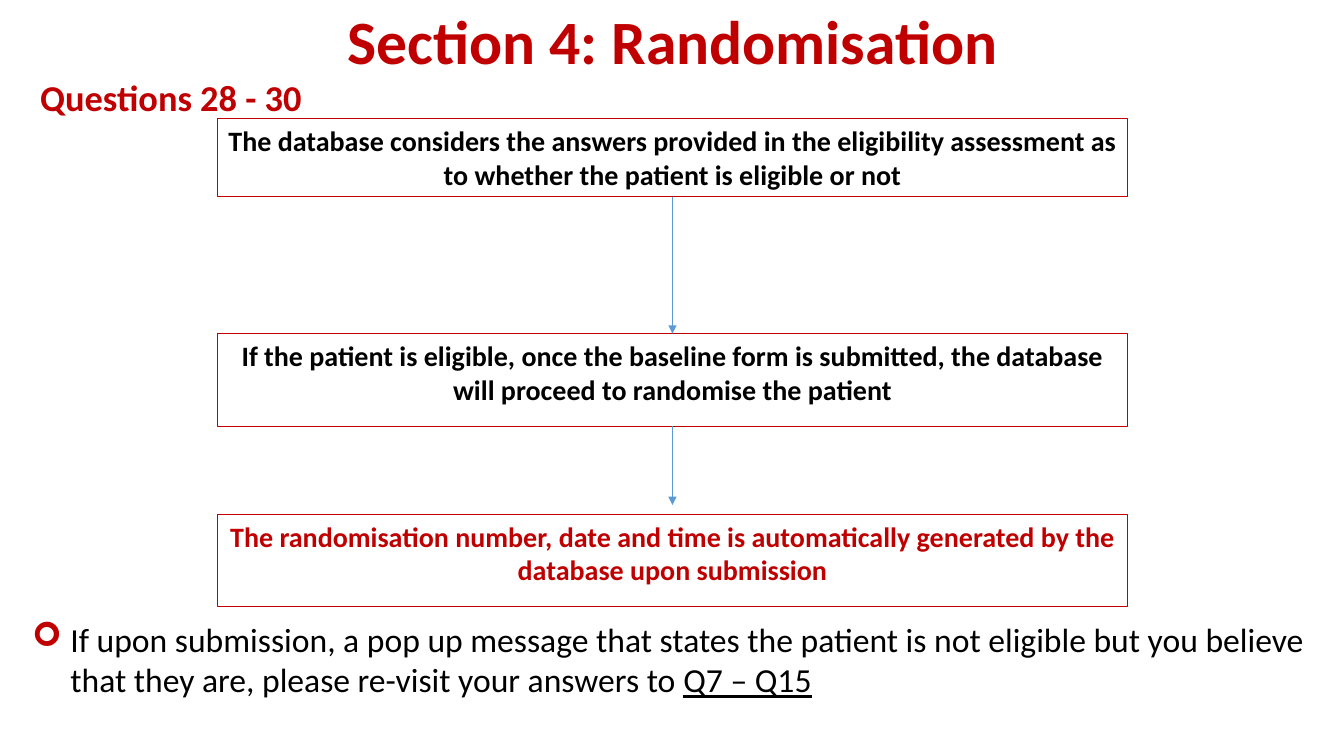
from dataclasses import dataclass

from lxml import etree
from pptx import Presentation
from pptx.dml.color import RGBColor
from pptx.enum.shapes import MSO_CONNECTOR, MSO_SHAPE
from pptx.enum.text import MSO_ANCHOR, PP_ALIGN
from pptx.oxml.ns import qn
from pptx.shapes.autoshape import Shape
from pptx.shapes.connector import Connector
from pptx.slide import Slide
from pptx.text.text import _Paragraph
from pptx.util import Emu, Inches, Pt

CENTER, LEFT = PP_ALIGN.CENTER, PP_ALIGN.LEFT
TOP = MSO_ANCHOR.TOP
RECTANGLE = MSO_SHAPE.RECTANGLE
STRAIGHT = MSO_CONNECTOR.STRAIGHT
TOP_SIDE, BOTTOM_SIDE = 0, 2

CELL = Inches(0.1)  # the slide is a grid of 133.3 columns by 75 rows
COLUMNS, ROWS = 133.3, 75
STEP_LEFT, STEP_WIDTH = 21.6, 90.2
RED, BLACK, BLUE = "C00000", "000000", "5B9BD5"
FONT = "Calibri"


@dataclass(frozen=True)
class Label:
    text: str
    left: float
    top: float
    width: float
    height: float
    size: float
    color: str = RED
    bold: bool = True
    align: PP_ALIGN = LEFT


@dataclass(frozen=True)
class Step:
    text: str
    top: float
    height: float
    color: str = BLACK


TITLE = Label("Section 4: Randomisation", 27.2, 0.6, 79.1, 5.9, 44, align=CENTER)
QUESTIONS = Label("Questions 28 - 30", 3, 7, 30.2, 5.4, 26)
ADVICE = Label(
    "If upon submission, a pop up message that states the patient is not eligible "
    "but you believe that they are, please re-visit your answers to ",
    2.2, 60.9, 128.9, 9.1, 24, BLACK, False,
)
ADVICE_REFERENCE = "Q7 – Q15"

STEPS = [
    Step("The database considers the answers provided in the eligibility assessment "
         "as to whether the patient is eligible or not", 11.8, 7.7),
    Step("If the patient is eligible, once the baseline form is submitted, "
         "the database will proceed to randomise the patient", 33.1, 9.2),
    Step("The randomisation number, date and time is automatically generated "
         "by the database upon submission", 51, 9.2, RED),
]
SECOND_ARROW_END = 50.1


def cells(count: float) -> Emu:
    return Emu(round(count * CELL))


def rgb(color: str) -> RGBColor:
    return RGBColor.from_string(color)


def write(shape: Shape, label: Label) -> _Paragraph:
    """Fill the shape with the label's text and return its paragraph."""
    frame = shape.text_frame
    frame.word_wrap = True
    frame.vertical_anchor = TOP
    frame.text = label.text
    paragraph = frame.paragraphs[0]
    paragraph.alignment = label.align
    style_runs(paragraph, label)
    return paragraph


def style_runs(paragraph: _Paragraph, label: Label) -> None:
    for run in paragraph.runs:
        run.font.name = FONT
        run.font.size = Pt(label.size)
        run.font.bold = label.bold
        run.font.color.rgb = rgb(label.color)


def add_label(slide: Slide, label: Label) -> _Paragraph:
    box = slide.shapes.add_textbox(
        cells(label.left), cells(label.top), cells(label.width), cells(label.height))
    return write(box, label)


def add_bullet(paragraph: _Paragraph, character: str, color: str) -> None:
    properties = paragraph._p.get_or_add_pPr()
    indent = Inches(0.38)
    properties.set("marL", str(indent))
    properties.set("indent", str(-indent))
    bullet_color = etree.SubElement(properties, qn("a:buClr"))
    etree.SubElement(bullet_color, qn("a:srgbClr"), val=color)
    etree.SubElement(properties, qn("a:buFont"), typeface="Wingdings")
    etree.SubElement(properties, qn("a:buChar"), char=character)


def add_step(slide: Slide, step: Step) -> Shape:
    label = Label(step.text, STEP_LEFT, step.top, STEP_WIDTH, step.height,
                  20, step.color, align=CENTER)
    box = slide.shapes.add_shape(
        RECTANGLE, cells(label.left), cells(label.top),
        cells(label.width), cells(label.height))
    box.shadow.inherit = False
    box.fill.background()
    box.line.color.rgb = rgb(RED)
    box.line.width = Pt(0.75)
    write(box, label)
    return box


def add_arrow_below(slide: Slide, box: Shape, end: Emu) -> Connector:
    middle = box.left + box.width // 2
    arrow = slide.shapes.add_connector(
        STRAIGHT, middle, box.top + box.height, middle, end)
    arrow.begin_connect(box, BOTTOM_SIDE)
    arrow.line.color.rgb = rgb(BLUE)
    arrow.line.width = Pt(0.5)
    etree.SubElement(arrow.line._get_or_add_ln(), qn("a:tailEnd"), type="triangle")
    etree.SubElement(arrow._element.spPr, qn("a:effectLst"))
    return arrow


def main() -> None:
    presentation = Presentation()
    presentation.slide_width = cells(COLUMNS)
    presentation.slide_height = cells(ROWS)
    slide = presentation.slides.add_slide(presentation.slide_layouts[6])

    add_label(slide, TITLE).line_spacing = 0.9
    add_label(slide, QUESTIONS)

    advice = add_label(slide, ADVICE)
    add_bullet(advice, "➢", RED)
    reference = advice.add_run()
    reference.text = ADVICE_REFERENCE
    reference.font.underline = True
    style_runs(advice, ADVICE)

    assessment, submission, _ = [add_step(slide, step) for step in STEPS]
    first_arrow = add_arrow_below(slide, assessment, submission.top)
    first_arrow.end_connect(submission, TOP_SIDE)
    add_arrow_below(slide, submission, cells(SECOND_ARROW_END))

    presentation.save("out.pptx")


if __name__ == "__main__":
    main()
